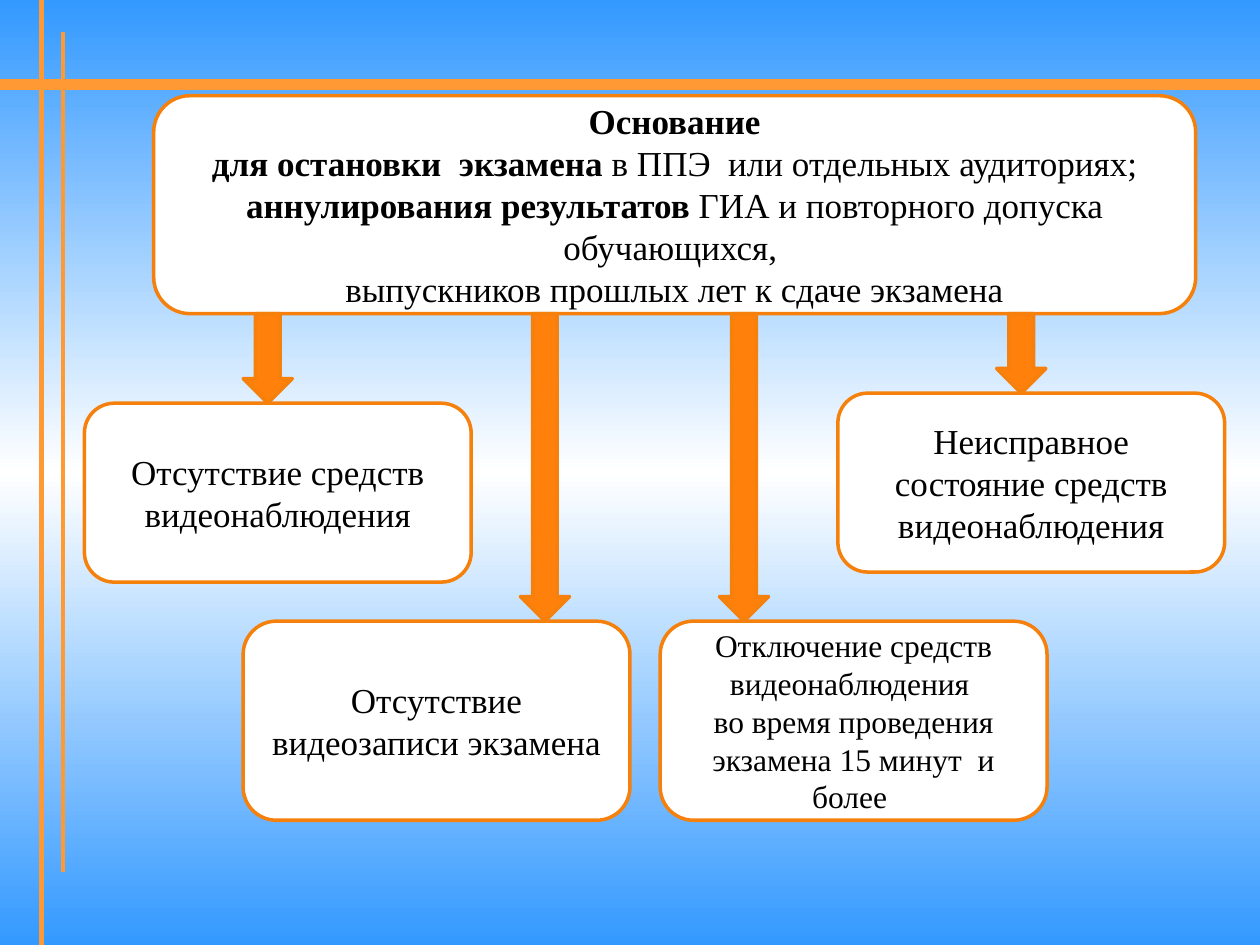
from copy import deepcopy
from typing import NamedTuple

from lxml import etree
from pptx import Presentation
from pptx.dml.color import RGBColor
from pptx.enum.shapes import MSO_CONNECTOR, MSO_SHAPE
from pptx.enum.text import MSO_ANCHOR, PP_ALIGN
from pptx.oxml.ns import qn
from pptx.util import Inches, Pt

STRAIGHT = MSO_CONNECTOR.STRAIGHT
ROUNDED = MSO_SHAPE.ROUNDED_RECTANGLE
DOWN_ARROW = MSO_SHAPE.DOWN_ARROW
MIDDLE = MSO_ANCHOR.MIDDLE
CENTER = PP_ALIGN.CENTER

COLORS = {
    "sky": "3399FF",
    "white": "FFFFFF",
    "rule": "FF9933",
    "outline": "F5800B",
    "arrow": "FF800B",
    "text": "000000",
}
FONT = "Times New Roman"
PAGE_WIDTH, PAGE_HEIGHT = 10, 7.5
REASON_WIDTH = 3.07
ARROW_WIDTH = 0.39


class Span(NamedTuple):
    text: str
    bold: bool = False


class Rule(NamedTuple):
    x1: float
    y1: float
    x2: float
    y2: float
    weight: float


class Card(NamedTuple):
    left: float
    top: float
    width: float
    height: float
    paras: list[list[Span]]
    size: int = 20


class Reason(NamedTuple):
    """A card below the heading, with the left edge of the arrow that leads to it."""
    card: Card
    arrow_left: float


RULES = [
    Rule(0, 0.67, PAGE_WIDTH, 0.67, 6),
    Rule(0.33, 0, 0.33, PAGE_HEIGHT, 3),
    Rule(0.5, 0.25, 0.5, 6.92, 2.25),
]
HEADING = Card(1.22, 0.76, 8.27, 1.73, [
    [Span("Основание", True)],
    [Span("для остановки  экзамена ", True), Span("в ППЭ  или отдельных аудиториях;")],
    [Span("аннулирования результатов", True),
     Span(" ГИА и повторного допуска обучающихся, ")],
    [Span("выпускников прошлых лет к сдаче экзамена")],
])
REASONS = [
    Reason(Card(0.67, 3.2, REASON_WIDTH, 1.42,
                [[Span("Отсутствие средств видеонаблюдения")]]), 1.93),
    Reason(Card(6.65, 3.12, REASON_WIDTH, 1.42,
                [[Span("Неисправное состояние средств видеонаблюдения")]]), 7.91),
    Reason(Card(1.93, 4.93, REASON_WIDTH, 1.58,
                [[Span("Отсутствие видеозаписи экзамена")]]), 4.13),
    Reason(Card(5.24, 4.93, REASON_WIDTH, 1.58,
                [[Span("Отключение средств видеонаблюдения ")],
                 [Span("во время проведения экзамена 15 минут  и более ")]], 18), 5.71),
]


def color(name: str) -> RGBColor:
    return RGBColor.from_string(COLORS[name])


def paint_background(page) -> None:
    """Fade vertically from sky to white and back."""
    fill = page.background.fill
    fill.gradient()
    fill.gradient_angle = 270
    stop_list = page.element.find(".//" + qn("a:gsLst"))
    stop_list.append(deepcopy(stop_list[-1]))
    for stop, name, position in zip(fill.gradient_stops, ("sky", "white", "sky"), (0, 0.5, 1)):
        stop.color.rgb = color(name)
        stop.position = position


def draw_rule(page, rule: Rule) -> None:
    line = page.shapes.add_connector(
        STRAIGHT, Inches(rule.x1), Inches(rule.y1), Inches(rule.x2), Inches(rule.y2))
    line.line.color.rgb = color("rule")
    line.line.width = Pt(rule.weight)
    properties = line._element.find(qn("p:spPr"))
    etree.SubElement(properties, qn("a:effectLst"))


def draw_outlined(page, kind, left: float, top: float, width: float, height: float, fill: str):
    shape = page.shapes.add_shape(
        kind, Inches(left), Inches(top), Inches(width), Inches(height))
    shape.shadow.inherit = False
    shape.fill.solid()
    shape.fill.fore_color.rgb = color(fill)
    shape.line.color.rgb = color("outline")
    shape.line.width = Pt(2)
    return shape


def draw_card(page, card: Card) -> None:
    box = draw_outlined(page, ROUNDED, card.left, card.top, card.width, card.height, "white")
    frame = box.text_frame
    frame.word_wrap = True
    frame.vertical_anchor = MIDDLE
    for index, spans in enumerate(card.paras):
        para = frame.add_paragraph() if index else frame.paragraphs[0]
        para.alignment = CENTER
        for span in spans:
            run = para.add_run()
            run.text = span.text
            run.font.name = FONT
            run.font.size = Pt(card.size)
            run.font.bold = span.bold
            run.font.color.rgb = color("text")


def draw_arrow(page, reason: Reason) -> None:
    top = HEADING.top + HEADING.height
    draw_outlined(page, DOWN_ARROW, reason.arrow_left, top,
                  ARROW_WIDTH, reason.card.top - top, "arrow")


def main() -> None:
    deck = Presentation()
    deck.slide_width, deck.slide_height = Inches(PAGE_WIDTH), Inches(PAGE_HEIGHT)
    page = deck.slides.add_slide(deck.slide_layouts[6])
    paint_background(page)
    for rule in RULES:
        draw_rule(page, rule)
    draw_card(page, HEADING)
    for reason in REASONS:
        draw_card(page, reason.card)
    for reason in REASONS:
        draw_arrow(page, reason)
    deck.save("out.pptx")


if __name__ == "__main__":
    main()
